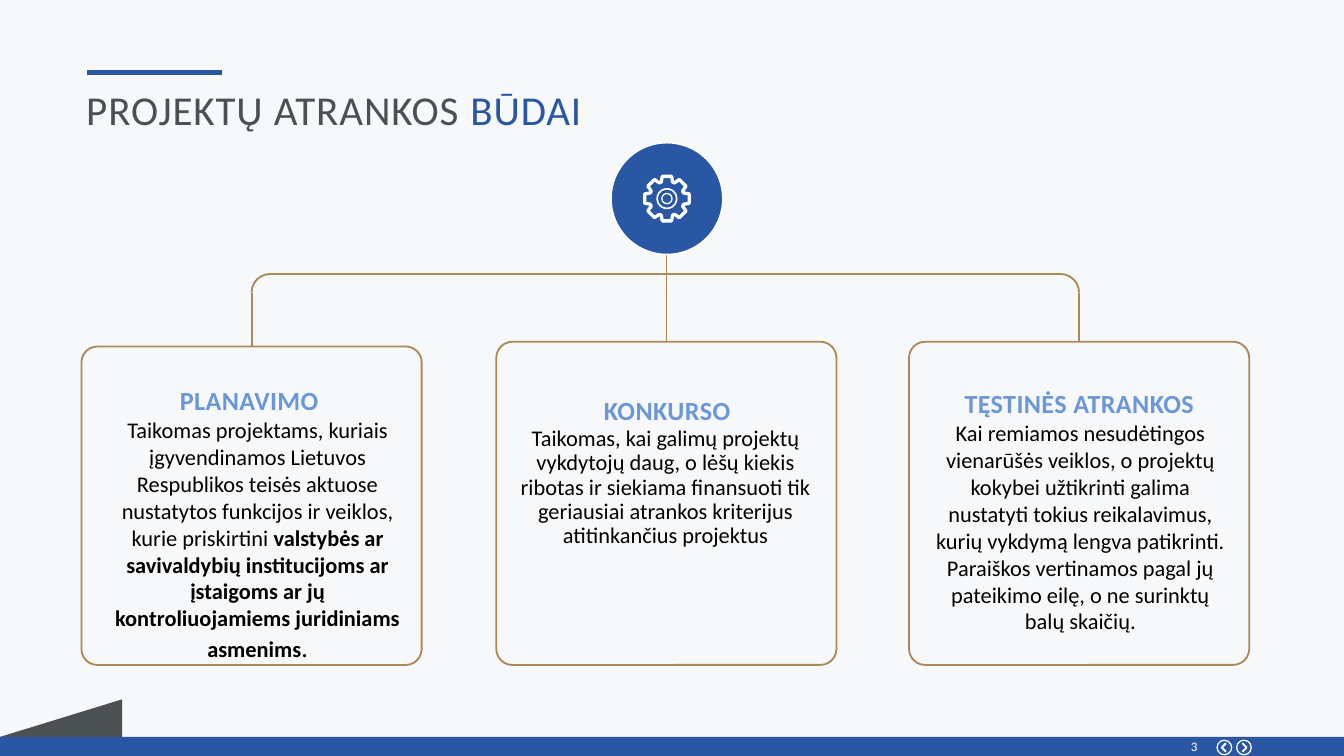
import math

import lxml.etree
import pptx
import pptx.dml.color
import pptx.enum.shapes
import pptx.enum.text
import pptx.oxml.ns
import pptx.util

Cm = pptx.util.Cm
Pt = pptx.util.Pt
SHAPE = pptx.enum.shapes.MSO_SHAPE
ALIGN = pptx.enum.text.PP_ALIGN

BLUE, GOLD, GREY, WHITE = "2957A3", "AE8958", "4B5050", "FFFFFF"
HEADING = {"size": Pt(14), "bold": True, "color": "6C96DA"}
BODY = {"size": Pt(12), "color": "000000"}
BODY_BOLD = {**BODY, "bold": True}
BODY_END = {**BODY, "size": Pt(14)}

METHODS = [
    {
        "box": (1.54, 6.55, 6.43, 6.02),
        "heading": "PLANAVIMO ", "heading_at": (0.41, 0.71), "heading_spacing": 17,
        "body_at": (0.51, 1.32), "body_spacing": None,
        "body": [
            ("Taikomas projektams, kuriais įgyvendinamos Lietuvos Respublikos teisės "
             "aktuose nustatytos funkcijos ir veiklos, kurie priskirtini ", BODY),
            ("valstybės ar savivaldybių institucijoms ar įstaigoms ar jų "
             "kontroliuojamiems juridiniams asmenims", BODY_BOLD),
            (".", BODY_END),
        ],
    },
    {
        "box": (9.38, 6.46, 6.43, 6.11),
        "heading": "KONKURSO", "heading_at": (0.41, 0.99), "heading_spacing": 17,
        "body_at": (0.38, 1.61), "body_spacing": 13,
        "body": [
            ("Taikomas, kai galimų projektų vykdytojų daug, o lėšų kiekis ribotas ir "
             "siekiama finansuoti tik geriausiai atrankos kriterijus atitinkančius "
             "projektus", BODY),
        ],
    },
    {
        "box": (17.18, 6.46, 6.43, 6.11),
        "heading": "TĘSTINĖS ATRANKOS", "heading_at": (0.4, 0.99), "heading_spacing": 13,
        "body_at": (0.42, 1.47), "body_spacing": None,
        "body": [
            ("Kai remiamos nesudėtingos vienarūšės veiklos, o projektų kokybei užtikrinti "
             "galima nustatyti tokius reikalavimus, kurių vykdymą lengva patikrinti. "
             "Paraiškos vertinamos pagal jų pateikimo eilę, o ne surinktų balų skaičių.",
             BODY),
        ],
    },
]


def rgb(value):
    return pptx.dml.color.RGBColor.from_string(value)


def paint(shape, fill=None, line=None, width=1):
    shape.shadow.inherit = False
    if fill:
        shape.fill.solid()
        shape.fill.fore_color.rgb = rgb(fill)
    else:
        shape.fill.background()
    if line:
        shape.line.color.rgb = rgb(line)
        shape.line.width = Pt(width)
    else:
        shape.line.fill.background()
    return shape


def add_shape(slide, kind, box, adjustments=(), **colours):
    shape = slide.shapes.add_shape(kind, *map(Cm, box))
    for index, value in enumerate(adjustments):
        shape.adjustments[index] = value
    return paint(shape, **colours)


def add_outline(slide, points, close=True, **colours):
    start, *others = [(Cm(x), Cm(y)) for x, y in points]
    builder = slide.shapes.build_freeform(*start)
    builder.add_line_segments(others, close=close)
    return paint(builder.convert_to_shape(), **colours)


def add_line(slide, start, end, colour=GOLD, width=1):
    line = slide.shapes.add_connector(
        pptx.enum.shapes.MSO_CONNECTOR.STRAIGHT, *map(Cm, start + end))
    line.line.color.rgb = rgb(colour)
    line.line.width = Pt(width)
    properties = line._element.spPr
    lxml.etree.SubElement(properties, pptx.oxml.ns.qn("a:effectLst"))
    return line


def add_text(slide, box, runs, align=ALIGN.LEFT, spacing=None, tracking=0):
    frame = slide.shapes.add_textbox(*map(Cm, box)).text_frame
    layout = {"word_wrap": True, "margin_left": 0, "margin_right": 0,
              "margin_top": 0, "margin_bottom": 0}
    for name, value in layout.items():
        setattr(frame, name, value)
    paragraph = frame.paragraphs[0]
    paragraph.alignment = align
    if spacing:
        paragraph.line_spacing = Pt(spacing)
    for text, style in runs:
        run = paragraph.add_run()
        run.text = text
        font_values = {"name": "Calibri", "bold": False, **style}
        run.font.color.rgb = rgb(font_values.pop("color"))
        for name, value in font_values.items():
            setattr(run.font, name, value)
        if tracking:
            run._r.get_or_add_rPr().set("spc", str(tracking))


def add_title(slide, box):
    left, top, width, height = box
    add_line(slide, (left + 0.02, top - 0.23), (left + 2.56, top - 0.23), BLUE, 2.25)
    add_text(slide, box, [("PROJEKTŲ ATRANKOS ", {"size": Pt(22), "color": GREY}),
                          ("BŪDAI", {"size": Pt(22), "color": BLUE})], tracking=50)


def add_footer(slide, box):
    left, top, width, height = box
    add_outline(slide, [(left, top), (left + 2.31, top - 0.71), (left + 2.31, top)],
                fill=GREY)
    add_shape(slide, SHAPE.RECTANGLE, box, fill=BLUE)
    add_text(slide, (left + 22.05, top + 0.03, 0.58, 0.3),
             [("3", {"size": Pt(7), "color": WHITE})], ALIGN.RIGHT, tracking=30)
    middle = top + 0.2
    for centre, direction in ((left + 23.14, -1), (left + 23.51, 1)):
        add_shape(slide, SHAPE.DONUT, (centre - 0.15, middle - 0.15, 0.3, 0.3),
                  [0.08], fill=WHITE)
        tail, tip = centre - 0.03 * direction, centre + 0.05 * direction
        add_outline(slide, [(tail, middle - 0.08), (tip, middle), (tail, middle + 0.08)],
                    close=False, line=WHITE)


def add_method(slide, method):
    left, top, width, height = method["box"]
    card = add_shape(slide, SHAPE.ROUNDED_RECTANGLE, method["box"], [0.05], line=GOLD)
    for part, runs, tracking, part_height in (
            ("heading", [(method["heading"], HEADING)], 20, 0.6),
            ("body", method["body"], 0, height - method["body_at"][1])):
        dx, dy = method[part + "_at"]
        add_text(slide, (left + dx, top + dy, 5.64, part_height), runs,
                 ALIGN.CENTER, method[part + "_spacing"], tracking)
    return card


def add_gear(slide, box):
    left, top, size, _ = box
    centre_x, centre_y = left + size / 2, top + size / 2
    add_shape(slide, SHAPE.OVAL, box, fill=BLUE, line=WHITE, width=0.75)
    tooth_profile = ((-19, 0.33), (-12, 0.43), (12, 0.43), (19, 0.33))
    teeth = [(centre_x + radius * math.cos(math.radians(turn + angle)),
              centre_y + radius * math.sin(math.radians(turn + angle)))
             for turn in range(0, 360, 45) for angle, radius in tooth_profile]
    add_outline(slide, teeth, line=WHITE, width=1.75)
    for radius, thickness in ((0.2, 0.07), (0.11, 0.12)):
        add_shape(slide, SHAPE.DONUT, (centre_x - radius, centre_y - radius,
                                       2 * radius, 2 * radius), [thickness], fill=WHITE)


def add_branches(slide, cards, stem_top, rail):
    corner = 0.35
    lefts = [method["box"][0] + method["box"][2] / 2 for method in METHODS]
    tops = [method["box"][1] for method in METHODS]
    stem = lefts[1]
    add_line(slide, (stem, stem_top), (stem, rail))
    for card, x, top in zip(cards, lefts, tops):
        start = rail
        if x != stem:
            side = 1 if x > stem else -1
            start = rail + corner
            add_line(slide, (stem, rail), (x - side * corner, rail))
            arc_left = x - 2 * corner if side > 0 else x
            angles = (270, 0) if side > 0 else (180, 270)
            add_shape(slide, SHAPE.ARC, (arc_left, rail, 2 * corner, 2 * corner),
                      [angle * 0.6 for angle in angles], line=GOLD)
        add_line(slide, (x, start), (x, top)).end_connect(card, 0)


def main():
    presentation = pptx.Presentation()
    presentation.slide_width, presentation.slide_height = Cm(25.4), Cm(14.29)
    slide = presentation.slides.add_slide(presentation.slide_layouts[6])
    slide.background.fill.solid()
    slide.background.fill.fore_color.rgb = rgb("F6F8FA")
    add_footer(slide, (0, 13.93, 25.4, 0.36))
    add_title(slide, (1.63, 1.6, 18.39, 1.07))
    cards = [add_method(slide, method) for method in METHODS]
    add_branches(slide, cards, 4.81, 5.18)
    add_gear(slide, (11.55, 2.7, 2.11, 2.11))
    presentation.save("out.pptx")


if __name__ == "__main__":
    main()
